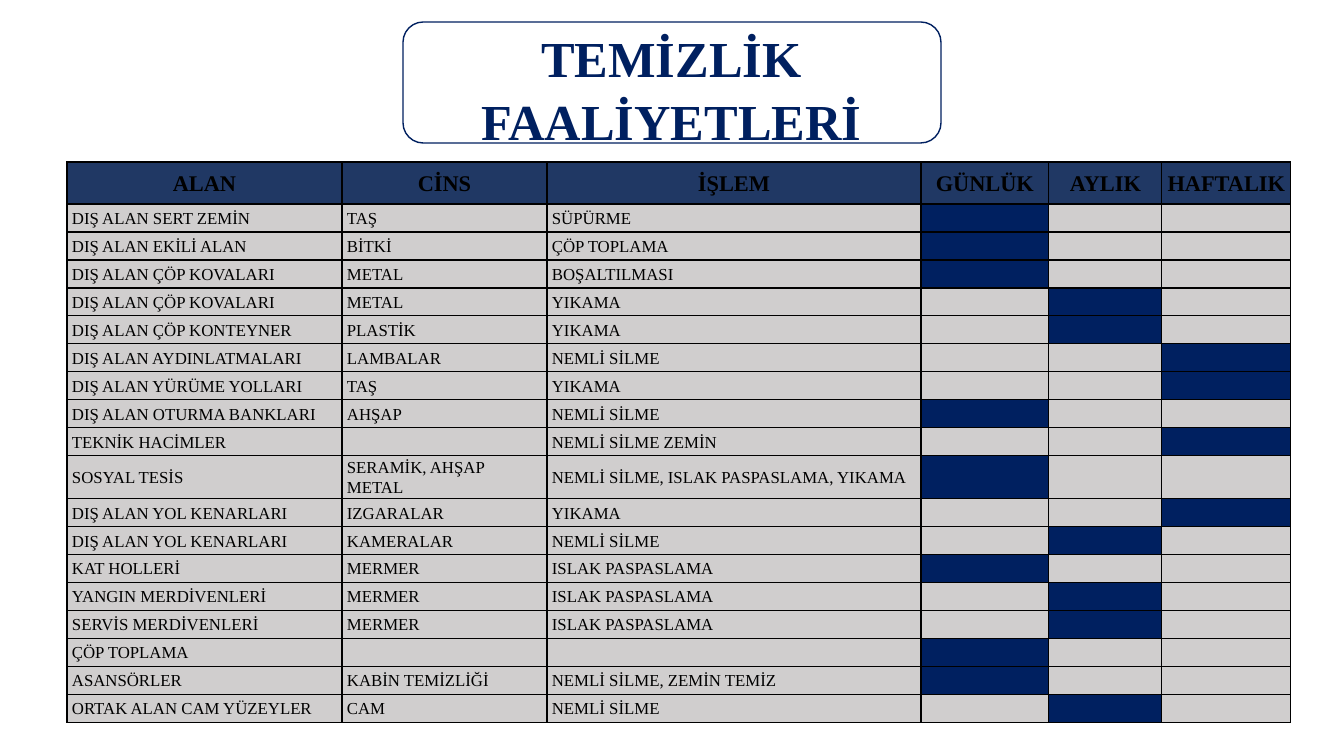
"""Build the cleaning activities slide with its schedule table."""
from dataclasses import dataclass

from lxml import etree
from pptx import Presentation
from pptx.dml.color import RGBColor
from pptx.enum.shapes import MSO_SHAPE
from pptx.enum.text import MSO_ANCHOR, PP_ALIGN
from pptx.oxml.ns import qn
from pptx.util import Emu, Pt

ROUNDED = MSO_SHAPE.ROUNDED_RECTANGLE
TOP, MIDDLE = MSO_ANCHOR.TOP, MSO_ANCHOR.MIDDLE
LEFT, CENTER = PP_ALIGN.LEFT, PP_ALIGN.CENTER
TITLE_ONLY = 5
SLIDE_WIDTH, SLIDE_HEIGHT = 1344, 756
SCALE = 12192000 / SLIDE_WIDTH


@dataclass(frozen=True)
class Theme:
    font: str = "Times New Roman"
    navy: str = "002060"
    header_fill: str = "203864"
    cell_fill: str = "D0CECE"
    black: str = "000000"
    title_size: int = 36
    header_size: int = 16
    body_size: int = 12
    line_width: int = 1


@dataclass(frozen=True)
class Box:
    left: int
    top: int
    width: int
    height: int


@dataclass(frozen=True)
class Activity:
    area: str
    kind: str
    task: str
    period: str
    height: int = 28


THEME = Theme()
TITLE = "TEMİZLİK FAALİYETLERİ"
TITLE_BOX = Box(336, 19, 671, 132)
FRAME_BOX = Box(403, 22, 538, 121)
TABLE_LEFT, TABLE_TOP = 67, 162
HEADER_HEIGHT = 42
CELL_INSET = 5
COLUMN_WIDTHS = (275, 205, 374, 128, 113, 129)
DAILY, MONTHLY, WEEKLY = PERIODS = ("GÜNLÜK", "AYLIK", "HAFTALIK")
HEADERS = ("ALAN", "CİNS", "İŞLEM", *PERIODS)
ACTIVITIES = (
    Activity("DIŞ ALAN SERT ZEMİN", "TAŞ", "SÜPÜRME", DAILY),
    Activity("DIŞ ALAN EKİLİ ALAN", "BİTKİ", "ÇÖP TOPLAMA", DAILY),
    Activity("DIŞ ALAN ÇÖP KOVALARI", "METAL", "BOŞALTILMASI", DAILY),
    Activity("DIŞ ALAN ÇÖP KOVALARI", "METAL", "YIKAMA", MONTHLY),
    Activity("DIŞ ALAN ÇÖP KONTEYNER", "PLASTİK", "YIKAMA", MONTHLY),
    Activity("DIŞ ALAN AYDINLATMALARI", "LAMBALAR", "NEMLİ SİLME", WEEKLY),
    Activity("DIŞ ALAN YÜRÜME YOLLARI", "TAŞ", "YIKAMA", WEEKLY),
    Activity("DIŞ ALAN OTURMA BANKLARI", "AHŞAP", "NEMLİ SİLME", DAILY),
    Activity("TEKNİK HACİMLER", "", "NEMLİ SİLME ZEMİN", WEEKLY),
    Activity("SOSYAL TESİS", "SERAMİK, AHŞAP METAL",
             "NEMLİ SİLME, ISLAK PASPASLAMA, YIKAMA", DAILY, 43),
    Activity("DIŞ ALAN YOL KENARLARI", "IZGARALAR", "YIKAMA", WEEKLY),
    Activity("DIŞ ALAN YOL KENARLARI", "KAMERALAR", "NEMLİ SİLME", MONTHLY),
    Activity("KAT HOLLERİ", "MERMER", "ISLAK PASPASLAMA", DAILY),
    Activity("YANGIN MERDİVENLERİ", "MERMER", "ISLAK PASPASLAMA", MONTHLY),
    Activity("SERVİS MERDİVENLERİ", "MERMER", "ISLAK PASPASLAMA", MONTHLY),
    Activity("ÇÖP TOPLAMA", "", "", DAILY),
    Activity("ASANSÖRLER", "KABİN TEMİZLİĞİ", "NEMLİ SİLME, ZEMİN TEMİZ", DAILY),
    Activity("ORTAK ALAN CAM YÜZEYLER", "CAM", "NEMLİ SİLME", MONTHLY),
)


def px(length: int) -> Emu:
    return Emu(round(length * SCALE))


def bounds(box: Box) -> tuple[Emu, Emu, Emu, Emu]:
    return px(box.left), px(box.top), px(box.width), px(box.height)


def color(value: str) -> RGBColor:
    return RGBColor.from_string(value)


def add_text(paragraph, text: str, size: int, text_color: str, bold: bool) -> None:
    run = paragraph.add_run()
    run.text = text
    run.font.name = THEME.font
    run.font.size = Pt(size)
    run.font.bold = bold
    run.font.color.rgb = color(text_color)


def add_title(slide) -> None:
    title = slide.shapes.title
    title.left, title.top, title.width, title.height = bounds(TITLE_BOX)
    frame = title.text_frame
    frame.word_wrap = True
    frame.vertical_anchor = TOP
    paragraph = frame.paragraphs[0]
    paragraph.alignment = CENTER
    paragraph.line_spacing = 1.05
    add_text(paragraph, TITLE, THEME.title_size, THEME.navy, True)


def add_frame(slide) -> None:
    shape = slide.shapes.add_shape(ROUNDED, *bounds(FRAME_BOX))
    shape.shadow.inherit = False
    shape.fill.background()
    shape.line.color.rgb = color(THEME.navy)
    shape.line.width = Pt(THEME.line_width)


def add_borders(cell) -> None:
    properties = cell._tc.get_or_add_tcPr()
    for index, side in enumerate(("a:lnL", "a:lnR", "a:lnT", "a:lnB")):
        line = etree.Element(qn(side), w=str(Pt(THEME.line_width)))
        fill = etree.SubElement(line, qn("a:solidFill"))
        etree.SubElement(fill, qn("a:srgbClr"), val=THEME.black)
        properties.insert(index, line)


def format_cell(cell, text: str, fill: str, size: int, header: bool) -> None:
    cell.fill.solid()
    cell.fill.fore_color.rgb = color(fill)
    cell.margin_left = cell.margin_right = px(CELL_INSET)
    cell.margin_top = cell.margin_bottom = 0
    cell.vertical_anchor = MIDDLE
    paragraph = cell.text_frame.paragraphs[0]
    paragraph.alignment = CENTER if header else LEFT
    paragraph.line_spacing = 1.07
    if text:
        add_text(paragraph, text, size, THEME.black, header)
    else:
        etree.SubElement(paragraph._p, qn("a:endParaRPr"), sz=str(size * 100))
    add_borders(cell)


def add_schedule(slide) -> None:
    heights = (HEADER_HEIGHT, *(activity.height for activity in ACTIVITIES))
    box = Box(TABLE_LEFT, TABLE_TOP, sum(COLUMN_WIDTHS), sum(heights))
    table = slide.shapes.add_table(len(heights), len(HEADERS), *bounds(box)).table
    for column, width in zip(table.columns, COLUMN_WIDTHS):
        column.width = px(width)
    for row, height in zip(table.rows, heights):
        row.height = px(height)
    for cell, text in zip(table.rows[0].cells, HEADERS):
        format_cell(cell, text, THEME.header_fill, THEME.header_size, True)
    for row_index, activity in enumerate(ACTIVITIES, start=1):
        texts = (activity.area, activity.kind, activity.task, "", "", "")
        for cell, header, text in zip(table.rows[row_index].cells, HEADERS, texts):
            fill = THEME.navy if header == activity.period else THEME.cell_fill
            format_cell(cell, text, fill, THEME.body_size, False)


def main() -> None:
    presentation = Presentation()
    presentation.slide_width = px(SLIDE_WIDTH)
    presentation.slide_height = px(SLIDE_HEIGHT)
    slide = presentation.slides.add_slide(presentation.slide_layouts[TITLE_ONLY])
    add_title(slide)
    add_frame(slide)
    add_schedule(slide)
    presentation.save("out.pptx")


if __name__ == "__main__":
    main()
